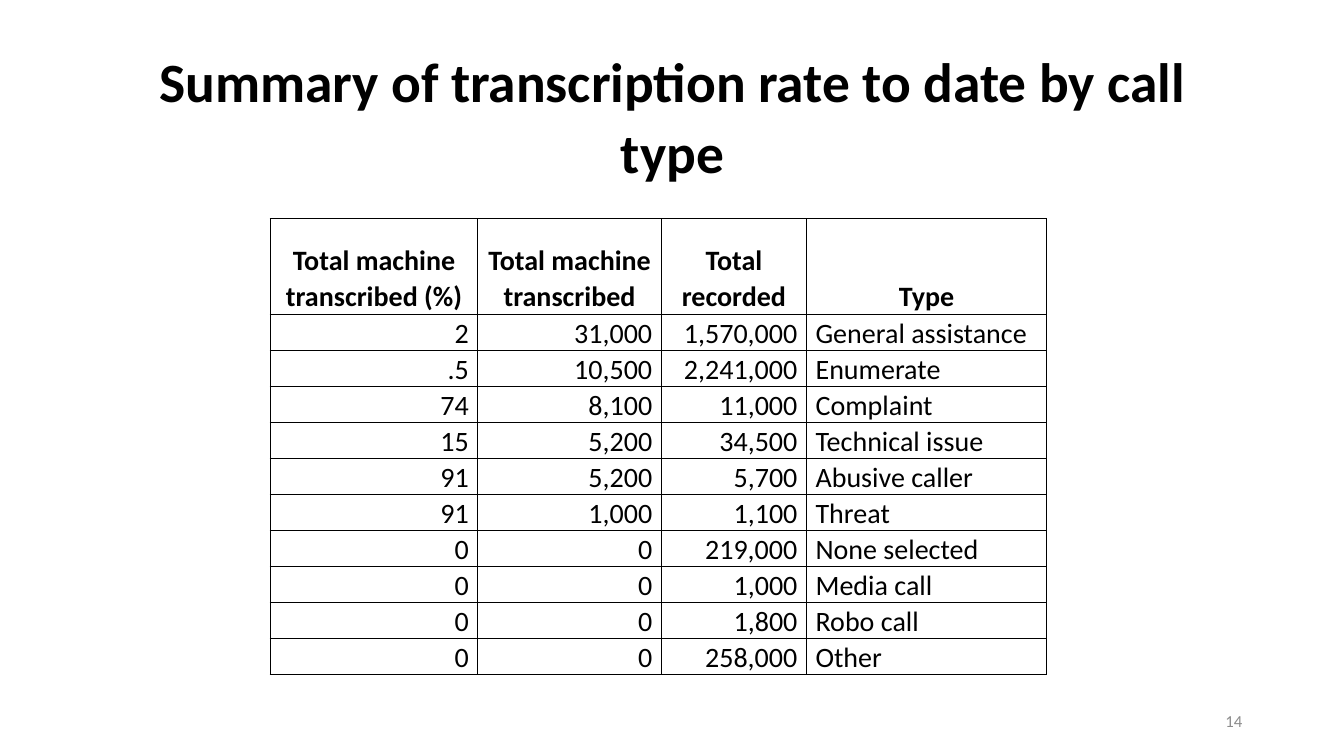
from lxml import etree
from pptx import Presentation
from pptx import util as u
from pptx.dml.color import RGBColor
from pptx.enum import text
from pptx.oxml import ns

COLORS = {"ink": "000000", "page_number": "8C8C8C"}
FONT = "Calibri"
LINE_SPACING = 1.07
BORDER_POINTS = 1
ALIGN = text.PP_ALIGN
ANCHOR = text.MSO_ANCHOR

COLUMN_WIDTHS = [2.06, 1.82, 1.44, 2.38]
HEADER_HEIGHT, BODY_HEIGHT = 0.95, 0.34
HEADINGS = ("Total machine transcribed (%)", "Total machine transcribed",
            "Total recorded", "Type")
CALL_TYPES = [
    ("2", "31,000", "1,570,000", "General assistance"),
    (".5", "10,500", "2,241,000", "Enumerate"),
    ("74", "8,100", "11,000", "Complaint"),
    ("15", "5,200", "34,500", "Technical issue"),
    ("91", "5,200", "5,700", "Abusive caller"),
    ("91", "1,000", "1,100", "Threat"),
    ("0", "0", "219,000", "None selected"),
    ("0", "0", "1,000", "Media call"),
    ("0", "0", "1,800", "Robo call"),
    ("0", "0", "258,000", "Other"),
]


def set_attributes(target, values):
    """Set every named attribute of the target."""
    for name, value in values.items():
        setattr(target, name, value)


def write(frame, words, size, align, color="ink", bold=False, spacing=LINE_SPACING):
    """Write one formatted paragraph into a text frame."""
    paragraph = frame.paragraphs[0]
    set_attributes(paragraph, {"alignment": align, "line_spacing": spacing})
    run = paragraph.add_run()
    run.text = words
    set_attributes(run.font, {"name": FONT, "size": u.Pt(size), "bold": bold})
    run.font.color.rgb = RGBColor.from_string(COLORS[color])


def add_label(slide, place, words, size, align, **style):
    """Add a wrapped, vertically centred text box."""
    frame = slide.shapes.add_textbox(*map(u.Inches, place)).text_frame
    set_attributes(frame, {"word_wrap": True, "vertical_anchor": ANCHOR.MIDDLE})
    write(frame, words, size, align, **style)


def add_borders(cell):
    """Draw a thin solid line on each side of a table cell."""
    properties = cell._tc.get_or_add_tcPr()
    for side in ("lnL", "lnR", "lnT", "lnB"):
        line = etree.SubElement(properties, ns.qn(f"a:{side}"), w=str(u.Pt(BORDER_POINTS)))
        fill = etree.SubElement(line, ns.qn("a:solidFill"))
        etree.SubElement(fill, ns.qn("a:srgbClr"), val=COLORS["ink"])


def fill_cell(cell, words, align, anchor, bold):
    """Format one table cell and write its words."""
    set_attributes(cell, {
        "margin_left": u.Inches(0.09), "margin_right": u.Inches(0.09),
        "margin_top": 0, "margin_bottom": 0, "vertical_anchor": anchor,
    })
    add_borders(cell)
    cell.fill.background()
    write(cell.text_frame, words, 20, align, bold=bold)


def add_rate_table(slide, left, top):
    """Add the table of transcription rates by call type."""
    rows = [HEADINGS, *CALL_TYPES]
    heights = [HEADER_HEIGHT] + [BODY_HEIGHT] * len(CALL_TYPES)
    size = (sum(COLUMN_WIDTHS), sum(heights))
    table = slide.shapes.add_table(
        len(rows), len(COLUMN_WIDTHS), *map(u.Inches, (left, top, *size))).table
    set_attributes(table, {"first_row": False, "horz_banding": False})
    for column, width in zip(table.columns, COLUMN_WIDTHS):
        column.width = u.Inches(width)
    for row, height in zip(table.rows, heights):
        row.height = u.Inches(height)
    for r, values in enumerate(rows):
        for c, words in enumerate(values):
            is_header, is_type = r == 0, c == len(HEADINGS) - 1
            align = ALIGN.CENTER if is_header else ALIGN.LEFT if is_type else ALIGN.RIGHT
            anchor = ANCHOR.TOP if is_type and not is_header else ANCHOR.BOTTOM
            fill_cell(table.cell(r, c), words, align, anchor, is_header)


def main():
    """Build the transcription summary slide."""
    deck = Presentation()
    set_attributes(deck, {"slide_width": u.Inches(13.33), "slide_height": u.Inches(7.5)})
    slide = deck.slides.add_slide(deck.slide_layouts[6])
    add_label(slide, (0.92, 0.4, 11.5, 1.45),
              "Summary of transcription rate to date by call type",
              39.6, ALIGN.CENTER, bold=True)
    add_label(slide, (9.42, 6.95, 3, 0.4), "14", 12, ALIGN.RIGHT,
              color="page_number", spacing=1.0)
    add_rate_table(slide, 2.68, 2.17)
    deck.save("out.pptx")


if __name__ == "__main__":
    main()
